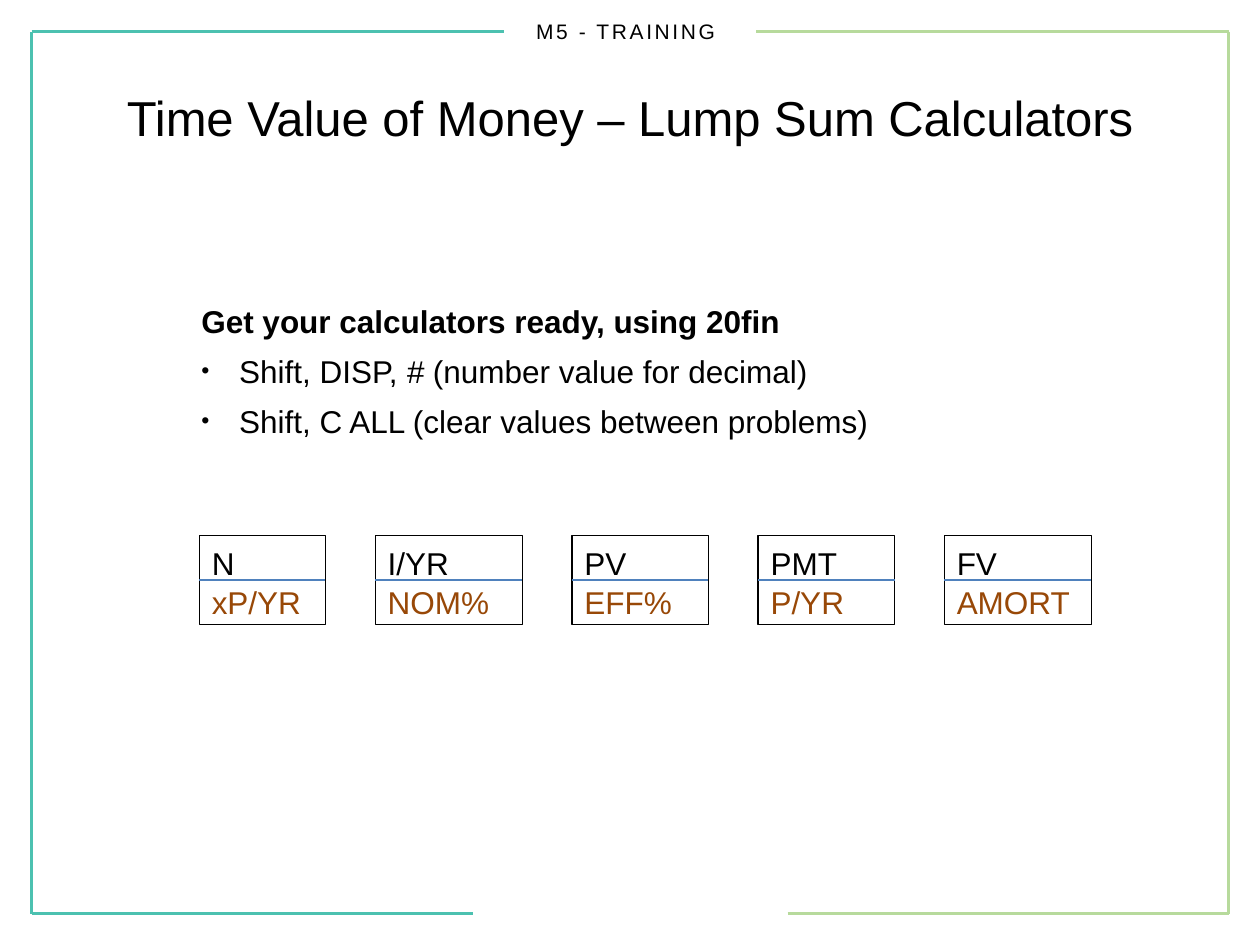
"""Build the calculator keys slide on a grid of 40 columns by 30 rows."""
from dataclasses import dataclass

import lxml.etree
import pptx
import pptx.dml.color
import pptx.enum.shapes
import pptx.enum.text
import pptx.oxml.ns
import pptx.util

RGBColor = pptx.dml.color.RGBColor
BLACK = RGBColor(0x00, 0x00, 0x00)
TEAL = RGBColor(0x4C, 0xC1, 0xB0)
GREEN = RGBColor(0xB7, 0xDA, 0x9C)
BLUE = RGBColor(0x4F, 0x81, 0xBD)
BROWN = RGBColor(0x98, 0x48, 0x07)
UNIT = pptx.util.Inches(0.25)
KEY_LEFT, KEY_TOP, KEY_TALL, KEY_GAP = 6.33, 17, 2.83, 1.58
LEADING = 1.05


@dataclass
class Rule:
    """A straight line between two grid points."""
    start: tuple[float, float]
    end: tuple[float, float]
    color: RGBColor
    width: float = 2.25


@dataclass
class Key:
    """A calculator key with its main and shifted functions."""
    main: str
    shift: str
    cols: float


FRAME = [
    Rule((1, 1), (1, 29), TEAL),
    Rule((39, 1), (39, 29), GREEN),
    Rule((1, 29), (15, 29), TEAL),
    Rule((25, 29), (39, 29), GREEN),
    Rule((1, 1), (16, 1), TEAL),
    Rule((24, 1), (39, 1), GREEN),
]
KEYS = [
    Key("N", "xP/YR", 4),
    Key("I/YR", "NOM%", 4.67),
    Key("PV", "EFF%", 4.33),
    Key("PMT", "P/YR", 4.33),
    Key("FV", "AMORT", 4.67),
]
STEPS = [
    ["Get your calculators ready, using 20fin"],
    ["Shift, DISP, ", "#", " (number value for decimal)"],
    ["Shift, C ALL (clear values between problems)"],
]


def grid(*cells: float) -> list[int]:
    """Turn grid cells into lengths."""
    return [round(cell * UNIT) for cell in cells]


def style(font, size: float, color: RGBColor = BLACK) -> None:
    """Set the face, size and colour of a font."""
    font.name = "Arial"
    font.size = pptx.util.Pt(size)
    font.color.rgb = color


def draw_rule(slide, rule: Rule) -> None:
    """Draw one line without a shadow."""
    line = slide.shapes.add_connector(
        pptx.enum.shapes.MSO_CONNECTOR.STRAIGHT, *grid(*rule.start, *rule.end))
    line.line.color.rgb = rule.color
    line.line.width = pptx.util.Pt(rule.width)
    lxml.etree.SubElement(
        line._element.spPr, pptx.oxml.ns.qn("a:effectLst"))


def draw_label(slide, box: tuple, text: str, size: float, gap: int = 0) -> None:
    """Draw one centred line of text, with optional letter spacing."""
    frame = slide.shapes.add_textbox(*grid(*box)).text_frame
    frame.word_wrap = True
    frame.vertical_anchor = pptx.enum.text.MSO_ANCHOR.MIDDLE
    frame.text = text
    para = frame.paragraphs[0]
    para.alignment = pptx.enum.text.PP_ALIGN.CENTER
    run = para.runs[0]
    style(run.font, size)
    if gap:
        run.font._element.set("spc", str(gap))


def set_indent(para, dot: bool) -> None:
    """Give a paragraph a hanging indent and, if asked, a small bullet."""
    props = para._p.get_or_add_pPr()
    hang = pptx.util.Inches(0.3)
    props.set("marL", str(hang))
    props.set("indent", str(-hang))
    if dot:
        for tag, name, value in (("a:buSzPct", "val", "73000"),
                                 ("a:buFont", "typeface", "Arial"),
                                 ("a:buChar", "char", "•")):
            lxml.etree.SubElement(
                props, pptx.oxml.ns.qn(tag)).set(name, value)


def draw_steps(slide) -> None:
    """Draw the bold lead and its bulleted steps."""
    frame = slide.shapes.add_textbox(*grid(6, 9.32, 28.68, 7)).text_frame
    frame.word_wrap = True
    for row, parts in enumerate(STEPS):
        para = frame.add_paragraph() if row else frame.paragraphs[0]
        set_indent(para, row > 0)
        para.line_spacing = LEADING
        if row:
            para.space_before = pptx.util.Pt(6)
        for part in parts:
            run = para.add_run()
            run.text = part
            style(run.font, 18)
            run.font.bold = row == 0
            run.font.italic = part == "#"


def draw_key(slide, key: Key, left: float) -> None:
    """Draw one key with a line across its middle."""
    box = slide.shapes.add_shape(
        pptx.enum.shapes.MSO_SHAPE.RECTANGLE,
        *grid(left, KEY_TOP, key.cols, KEY_TALL))
    box.shadow.inherit = False
    box.fill.background()
    box.line.color.rgb = BLACK
    box.line.width = pptx.util.Pt(0.75)
    frame = box.text_frame
    frame.word_wrap = True
    frame.vertical_anchor = pptx.enum.text.MSO_ANCHOR.TOP
    frame.text = f"{key.main}\n{key.shift}"
    for para, color in zip(frame.paragraphs, (BLACK, BROWN)):
        para.alignment = pptx.enum.text.PP_ALIGN.LEFT
        para.line_spacing = LEADING
        style(para.runs[0].font, 18, color)
    mid = KEY_TOP + KEY_TALL / 2
    draw_rule(slide, Rule((left, mid), (left + key.cols, mid), BLUE, 0.9))


def main() -> None:
    """Build and save the slide."""
    deck = pptx.Presentation()
    deck.slide_width, deck.slide_height = grid(40, 30)
    slide = deck.slides.add_slide(deck.slide_layouts[6])
    for rule in FRAME:
        draw_rule(slide, rule)
    draw_label(slide, (0, 0, 40, 2), "M5 - TRAINING ", 12, 150)
    draw_steps(slide)
    left = KEY_LEFT
    for key in KEYS:
        draw_key(slide, key, left)
        left += key.cols + KEY_GAP
    draw_label(slide, (2, 1.2, 36, 5),
               "Time Value of Money – Lump Sum Calculators", 28)
    deck.save("out.pptx")


if __name__ == "__main__":
    main()
